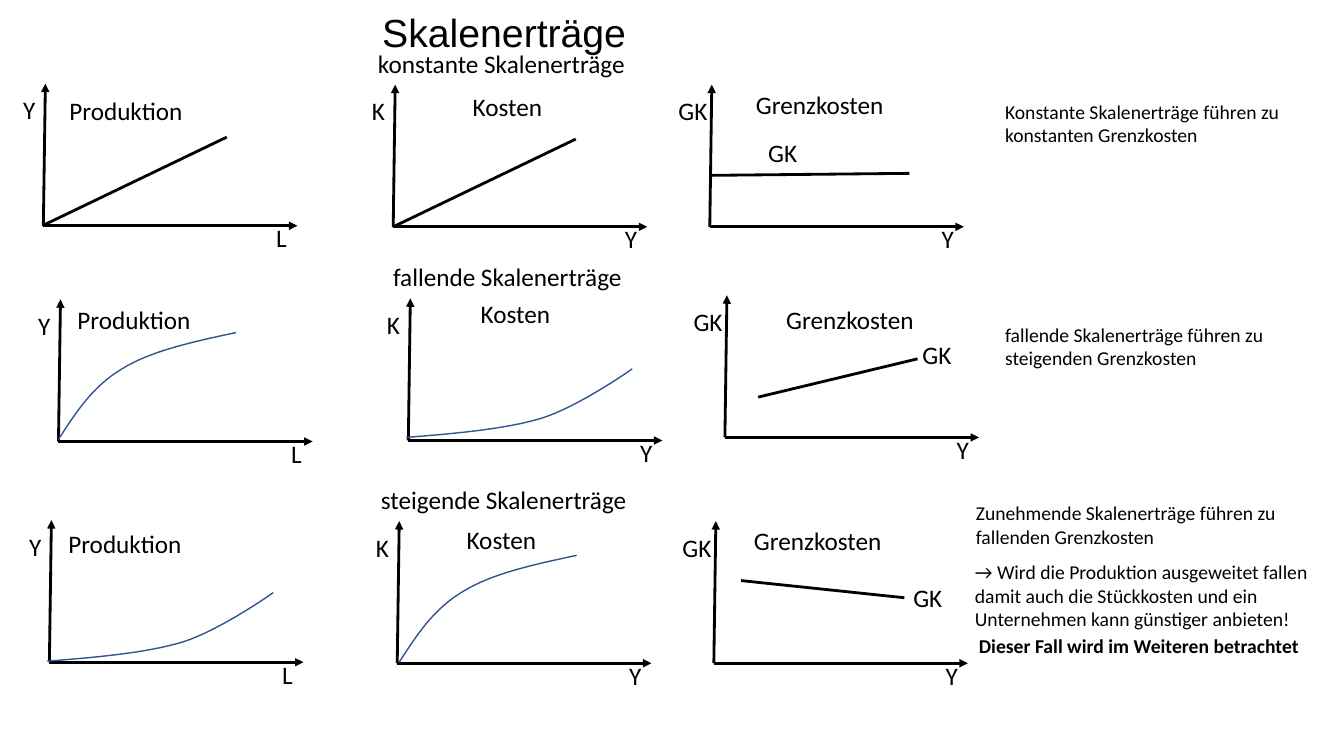
from dataclasses import dataclass

from lxml.etree import SubElement
from pptx import Presentation
from pptx.dml.color import RGBColor as Color
from pptx.enum.shapes import MSO_CONNECTOR as Link
from pptx.enum.text import MSO_ANCHOR as Anchor, MSO_AUTO_SIZE as Fit, PP_ALIGN as Align
from pptx.oxml.ns import qn
from pptx.util import Inches, Pt


@dataclass(frozen=True)
class Theme:
    ink: Color = Color(0, 0, 0)
    curve: Color = Color(0x32, 0x54, 0x91)
    head: str = "Arial"
    body: str = "Calibri"
    big: int = 28
    mid: int = 18
    small: int = 14
    thick: int = 2
    thin: int = 1


# Lengths are columns and rows of a grid with ten cells to the inch.
CELL = Inches(0.1)
TALL = 4
WIDTH = {"L": 3.1, "Y": 3.2, "K": 3.3, "GK": 4.9, "Produktion": 13.4, "Kosten": 9,
         "Grenzkosten": 15.4, "konstante Skalenerträge": 26.8,
         "fallende Skalenerträge": 25, "steigende Skalenerträge": 26.7}

# Cubic control points, relative to the start of the curve
CONCAVE = [(0, 0), (1.7, -2.6), (3.3, -5.2), (6.3, -7),
           (9.2, -8.8), (13.4, -9.7), (17.6, -10.6)]
CONVEX = [(0, 0), (4.9, -0.4), (9.7, -0.8), (13.4, -1.9),
          (17.2, -3.1), (22.4, -6.8), (22.4, -6.8)]


def grid(*cells):
    return [round(n * CELL) for n in cells]


def trace(knots, steps=16):
    """Sample a chain of cubic Bézier pieces."""
    spots = [knots[0]]
    for i in range(0, len(knots) - 1, 3):
        for k in range(1, steps + 1):
            t = k / steps
            mix = ((1 - t) ** 3, 3 * t * (1 - t) ** 2, 3 * t * t * (1 - t), t ** 3)
            spots.append(tuple(sum(m * p[axis] for m, p in zip(mix, knots[i:i + 4]))
                               for axis in (0, 1)))
    return spots


class Board:
    def __init__(self, deck, theme):
        self.theme = theme
        self.slide = deck.slides.add_slide(deck.slide_layouts[5])
        self.shapes = self.slide.shapes

    def add_run(self, frame, text, size, face, bold=False):
        run = frame.paragraphs[0].add_run()
        run.text = text
        font = run.font
        font.size, font.name, font.bold = Pt(size), face, bold
        font.color.rgb = self.theme.ink

    def title(self, text, box):
        shape = self.shapes.title
        shape.left, shape.top, shape.width, shape.height = grid(*box)
        frame = shape.text_frame
        frame.vertical_anchor = Anchor.MIDDLE
        frame.auto_size = Fit.NONE
        frame.paragraphs[0].alignment = Align.CENTER
        self.add_run(frame, text, self.theme.big, self.theme.head)

    def label(self, text, x, y):
        frame = self.shapes.add_textbox(*grid(x, y, WIDTH[text], TALL)).text_frame
        frame.word_wrap = False
        frame.auto_size = Fit.SHAPE_TO_FIT_TEXT
        self.add_run(frame, text, self.theme.mid, self.theme.body)

    def note(self, text, box, bold=False):
        frame = self.shapes.add_textbox(*grid(*box)).text_frame
        frame.word_wrap = True
        self.add_run(frame, text, self.theme.small, self.theme.body, bold)

    def line(self, start, end, arrow=False):
        link = self.shapes.add_connector(Link.STRAIGHT, *grid(*start, *end))
        link.line.color.rgb = self.theme.ink
        link.line.width = Pt(self.theme.thick)
        props = link.element.spPr
        if arrow:
            SubElement(props.find(qn("a:ln")), qn("a:tailEnd"), type="triangle")
        SubElement(props, qn("a:effectLst"))

    def curve(self, knots, x, y):
        first, *rest = [grid(x + dx, y + dy) for dx, dy in trace(knots)]
        pen = self.shapes.build_freeform(*first)
        pen.add_line_segments(rest, close=False)
        shape = pen.convert_to_shape()
        shape.fill.background()
        shape.line.color.rgb = self.theme.curve
        shape.line.width = Pt(self.theme.thin)
        shape.shadow.inherit = False

    def plot(self, name, x, y, spot):
        """Draw axes from the origin (x, y), their letters and the plot's name."""
        up, right = AXES[name]
        self.line((x, y), (x + 0.2, y - 14.1), arrow=True)
        self.line((x, y), (x + 25.2, y), arrow=True)
        edge = x + (0.8 if up == "GK" else 0.2)
        self.label(up, edge - WIDTH[up], y - 13.5)
        self.label(right, x + 25.2 - WIDTH[right], y - 0.8)
        self.label(name, *spot)


AXES = {"Produktion": ("Y", "L"), "Kosten": ("K", "Y"), "Grenzkosten": ("GK", "Y")}

HEADS = [("konstante Skalenerträge", 36.5, 4.3),
         ("fallende Skalenerträge", 38, 25.4),
         ("steigende Skalenerträge", 36.8, 47.6)]

# Per row: origin and name position of each plot, in the order of AXES
PLOTS = [
    [(4.3, 22.4, (5.9, 9)), (39, 22.5, (45.9, 8.6)), (70.4, 22.5, (74, 8.4))],
    [(5.8, 43.8, (6.7, 29.7)), (40.5, 43.7, (46.7, 29.1)), (71.9, 43.4, (77, 29.7))],
    [(4.9, 65.7, (5.8, 51.9)), (39.4, 65.8, (45.3, 51.5)), (70.8, 65.8, (73.8, 51.6))],
]

LINES = [((4.4, 22.3), (22.5, 13.6)), ((39, 22.5), (57.1, 13.8)),
         ((70.4, 17.4), (90.2, 17.2)), ((75.2, 39.4), (91, 35.6)),
         ((73.5, 57.6), (89.7, 59.3))]

CURVES = [(CONCAVE, 5.8, 43.6), (CONVEX, 40.3, 43.4),
          (CONVEX, 4.7, 65.6), (CONCAVE, 39.6, 65.7)]

MARKS = [(75.2, 13.1), (90.5, 33.2), (89.6, 57.3)]

NOTES = [
    ("Konstante Skalenerträge führen zu konstanten Grenzkosten", (98.7, 9.4, 34.6, 10.4)),
    ("fallende Skalenerträge führen zu steigenden Grenzkosten", (98.7, 31.5, 34.6, 6.3)),
    ("Zunehmende Skalenerträge führen zu fallenden Grenzkosten", (95.8, 49.2, 35.9, 6.3)),
    ("→ Wird die Produktion ausgeweitet fallen damit auch die Stückkosten und ein "
     "Unternehmen kann günstiger anbieten!", (95.7, 55.1, 37.2, 6.3)),
    ("Dieser Fall wird im Weiteren betrachtet", (96.1, 62.4, 35.9, 6.3), True),
]


def main():
    deck = Presentation()
    deck.slide_width, deck.slide_height = Inches(13.33), Inches(7.5)
    board = Board(deck, Theme())
    board.title("Skalenerträge", (0, -0.3, 100, 7))
    for head in HEADS:
        board.label(*head)
    for row in PLOTS:
        for name, place in zip(AXES, row):
            board.plot(name, *place)
    for ends in LINES:
        board.line(*ends)
    for bend in CURVES:
        board.curve(*bend)
    for mark in MARKS:
        board.label("GK", *mark)
    for note in NOTES:
        board.note(*note)
    deck.save("out.pptx")


if __name__ == "__main__":
    main()
